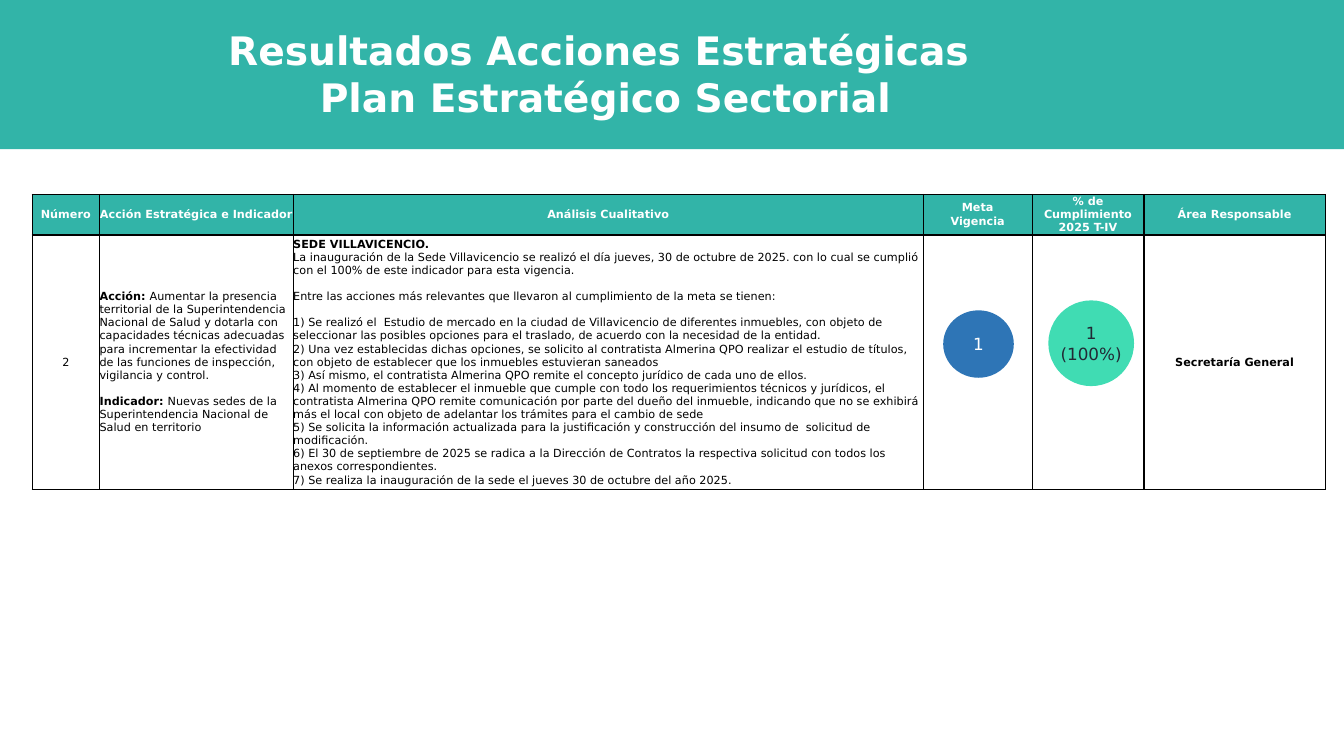
from lxml import etree
from pptx import Presentation
from pptx.dml.color import RGBColor
from pptx.enum.shapes import MSO_SHAPE
from pptx.enum.text import MSO_ANCHOR, PP_ALIGN
from pptx.oxml.ns import qn
from pptx.util import Cm, Pt

RECTANGLE, OVAL = MSO_SHAPE.RECTANGLE, MSO_SHAPE.OVAL
LEFT, CENTER, MIDDLE = PP_ALIGN.LEFT, PP_ALIGN.CENTER, MSO_ANCHOR.MIDDLE

FONT = "DejaVu Sans"
TEAL, MINT, BLUE = "32B4A8", "40DCB3", "2E75B6"
WHITE, BLACK, DARK = "FFFFFF", "000000", "222A35"
SECTION_GAP = 9.36  # one line of table text, in points

COLUMN_WIDTHS = [1.7, 4.88, 15.88, 2.74, 2.82, 4.57]
ROW_HEIGHTS = [1.02, 6.42]
HEADERS = [
    ["Número"],
    ["Acción Estratégica e Indicador"],
    ["Análisis Cualitativo"],
    ["Meta", "Vigencia"],
    ["% de Cumplimiento 2025 T-IV"],
    ["Área Responsable"],
]

# Each paragraph: bold part, plain part, space before in points
ACTION = [
    ("Acción: ", "Aumentar la presencia territorial de la Superintendencia Nacional de Salud "
     "y dotarla con capacidades técnicas adecuadas para incrementar la efectividad de las "
     "funciones de inspección, vigilancia y control.", 0),
    ("Indicador: ", "Nuevas sedes de la Superintendencia Nacional de Salud en territorio",
     SECTION_GAP),
]
ANALYSIS = [
    ("SEDE VILLAVICENCIO.", "", 0),
    ("", "La inauguración de la Sede Villavicencio se realizó el día jueves, 30 de octubre de "
     "2025. con lo cual se cumplió con el 100% de este indicador para esta vigencia.", 0),
    ("", "Entre las acciones más relevantes que llevaron al cumplimiento de la meta se tienen:",
     SECTION_GAP),
    ("", "1) Se realizó el  Estudio de mercado en la ciudad de Villavicencio de diferentes "
     "inmuebles, con objeto de seleccionar las posibles opciones para el traslado, de acuerdo "
     "con la necesidad de la entidad.", SECTION_GAP),
    ("", "2) Una vez establecidas dichas opciones, se solicito al contratista Almerina QPO "
     "realizar el estudio de títulos, con objeto de establecer que los inmuebles estuvieran "
     "saneados", 0),
    ("", "3) Así mismo, el contratista Almerina QPO remite el concepto jurídico de cada uno de "
     "ellos.", 0),
    ("", "4) Al momento de establecer el inmueble que cumple con todo los requerimientos "
     "técnicos y jurídicos, el contratista Almerina QPO remite comunicación por parte del "
     "dueño del inmueble, indicando que no se exhibirá más el local con objeto de adelantar "
     "los trámites para el cambio de sede", 0),
    ("", "5) Se solicita la información actualizada para la justificación y construcción del "
     "insumo de  solicitud de modificación.", 0),
    ("", "6) El 30 de septiembre de 2025 se radica a la Dirección de Contratos la respectiva "
     "solicitud con todos los anexos correspondientes.", 0),
    ("", "7) Se realiza la inauguración de la sede el jueves 30 de octubre del año 2025.", 0),
]


def color(value):
    return RGBColor.from_string(value)


def write(frame, paragraphs, size, ink, align=CENTER):
    for index, (bold_text, plain_text, gap) in enumerate(paragraphs):
        para = frame.paragraphs[0] if index == 0 else frame.add_paragraph()
        para.alignment = align
        if gap:
            para.space_before = Pt(gap)
        para.font.name = FONT
        para.font.size = Pt(size)
        para.font.color.rgb = color(ink)
        for text, bold in ((bold_text, True), (plain_text, False)):
            if text:
                span = para.add_run()
                span.text = text
                span.font.bold = bold


def add_filled_shape(page, kind, left, top, width, height, fill):
    shape = page.shapes.add_shape(kind, Cm(left), Cm(top), Cm(width), Cm(height))
    shape.shadow.inherit = False
    shape.fill.solid()
    shape.fill.fore_color.rgb = color(fill)
    shape.line.fill.background()
    return shape


def add_badge(page, left, top, width, height, fill, lines, ink):
    badge = add_filled_shape(page, OVAL, left, top, width, height, fill)
    frame = badge.text_frame
    frame.word_wrap = False
    frame.vertical_anchor = MIDDLE
    frame.margin_left = frame.margin_right = frame.margin_top = frame.margin_bottom = 0
    write(frame, [("", line, 0) for line in lines], 12, ink)


def add_title(page, lines):
    box = page.shapes.add_textbox(Cm(3.15), Cm(0.53), Cm(24.21), Cm(2.64))
    box.text_frame.word_wrap = True
    write(box.text_frame, [(line, "", 0) for line in lines], 28, WHITE)


def set_borders(cell, bottom_width):
    properties = cell._tc.get_or_add_tcPr()
    widths = {"a:lnL": 1, "a:lnR": 1, "a:lnT": 1, "a:lnB": bottom_width}
    for position, (tag, width) in enumerate(widths.items()):
        line = etree.Element(qn(tag), w=str(Pt(width)))
        fill = etree.SubElement(line, qn("a:solidFill"))
        etree.SubElement(fill, qn("a:srgbClr"), val=BLACK)
        properties.insert(position, line)


def fill_cell(cell, paragraphs, fill, ink, align=CENTER, bottom_width=1):
    cell.margin_left = cell.margin_right = cell.margin_top = cell.margin_bottom = 0
    cell.vertical_anchor = MIDDLE
    cell.fill.solid()
    cell.fill.fore_color.rgb = color(fill)
    set_borders(cell, bottom_width)
    write(cell.text_frame, paragraphs, 8, ink, align)


def add_results_table(page):
    table = page.shapes.add_table(
        len(ROW_HEIGHTS), len(COLUMN_WIDTHS), Cm(0.81), Cm(4.9),
        Cm(sum(COLUMN_WIDTHS)), Cm(sum(ROW_HEIGHTS))).table
    for column, width in zip(table.columns, COLUMN_WIDTHS):
        column.width = Cm(width)
    for row, height in zip(table.rows, ROW_HEIGHTS):
        row.height = Cm(height)

    for index, lines in enumerate(HEADERS):
        heading = [(line, "", 0) for line in lines]
        fill_cell(table.cell(0, index), heading, TEAL, WHITE, bottom_width=2)

    body = [
        ([("", "2", 0)], CENTER),
        (ACTION, LEFT),
        (ANALYSIS, LEFT),
        ([], CENTER),
        ([], CENTER),
        ([("Secretaría General", "", 0)], CENTER),
    ]
    for index, (paragraphs, align) in enumerate(body):
        fill_cell(table.cell(1, index), paragraphs, WHITE, BLACK, align)


def main():
    deck = Presentation()
    deck.slide_width, deck.slide_height = Cm(33.87), Cm(19.05)
    page = deck.slides.add_slide(deck.slide_layouts[6])

    # Title band
    add_filled_shape(page, RECTANGLE, 0, 0, 33.87, 3.76, TEAL)
    add_title(page, ["Resultados Acciones Estratégicas ", "Plan Estratégico Sectorial"])

    # Results table with its goal and progress badges
    add_results_table(page)
    add_badge(page, 26.42, 7.57, 2.16, 2.16, MINT, ["1", "(100%)"], DARK)
    add_badge(page, 23.77, 7.82, 1.78, 1.7, BLUE, ["1"], WHITE)

    deck.save("out.pptx")


if __name__ == "__main__":
    main()
